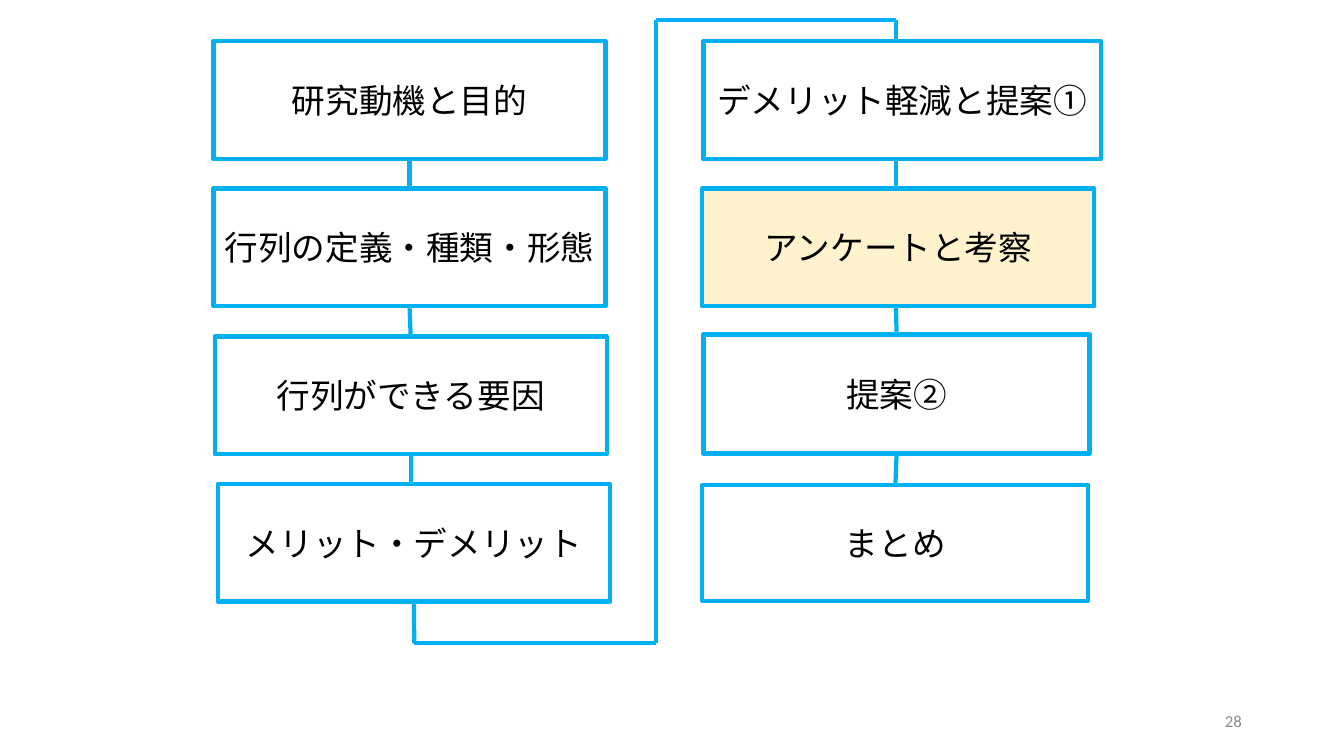
from pptx import Presentation
from pptx.dml.color import RGBColor
from pptx.enum.shapes import MSO_CONNECTOR, MSO_SHAPE
from pptx.enum.text import MSO_ANCHOR, PP_ALIGN
from pptx.oxml.ns import qn
from pptx.util import Cm, Pt
from lxml.etree import SubElement

SKY = RGBColor(0x00, 0xB0, 0xF0)
WHITE = RGBColor(0xFF, 0xFF, 0xFF)
CREAM = RGBColor(0xFF, 0xF2, 0xCC)
BLACK = RGBColor(0x00, 0x00, 0x00)
GREY = RGBColor(0x8C, 0x8C, 0x8C)

TOP, BOTTOM = 0, 2
LEFT_AXIS, GUTTER, RIGHT_AXIS = 10.44, 16.54, 22.58
ROOF, FLOOR = 0.51, 16.21

# text, left, top, width, height, fill
LEFT_STEPS = [
    ("研究動機と目的", 5.38, 1.04, 9.88, 2.97, WHITE),
    ("行列の定義・種類・形態", 5.38, 4.75, 9.88, 2.97, WHITE),
    ("行列ができる要因", 5.41, 8.48, 9.88, 2.97, WHITE),
    ("メリット・デメリット", 5.49, 12.19, 9.88, 2.97, WHITE),
]
RIGHT_STEPS = [
    ("デメリット軽減と提案①", 17.73, 1.04, 10.01, 2.97, WHITE),
    ("アンケートと考察", 17.7, 4.75, 9.88, 2.97, CREAM),
    ("提案②", 17.73, 8.43, 9.73, 3, WHITE),
    ("まとめ", 17.7, 12.22, 9.73, 2.92, WHITE),
]


def write(frame, text, size, color, alignment):
    frame.word_wrap = True
    frame.vertical_anchor = MSO_ANCHOR.MIDDLE
    paragraph = frame.paragraphs[0]
    paragraph.text = text
    paragraph.alignment = alignment
    paragraph.font.name = "Calibri"
    paragraph.font.size = Pt(size)
    paragraph.font.color.rgb = color


def add_step(slide, text, left, top, width, height, fill):
    step = slide.shapes.add_shape(
        MSO_SHAPE.RECTANGLE, Cm(left), Cm(top), Cm(width), Cm(height))
    step.shadow.inherit = False
    step.fill.solid()
    step.fill.fore_color.rgb = fill
    step.line.color.rgb = SKY
    step.line.width = Pt(3)
    write(step.text_frame, text, 24, BLACK, PP_ALIGN.CENTER)
    return step


def add_link(slide, start, end, weight=3):
    """Draw a line; each end is an (x, y) in cm or a step to join, from bottom to top."""
    start_x, start_y = start if isinstance(start, tuple) else (0, 0)
    end_x, end_y = end if isinstance(end, tuple) else (0, 0)
    link = slide.shapes.add_connector(
        MSO_CONNECTOR.STRAIGHT, Cm(start_x), Cm(start_y), Cm(end_x), Cm(end_y))
    if not isinstance(start, tuple):
        link.begin_connect(start, BOTTOM)
    if not isinstance(end, tuple):
        link.end_connect(end, TOP)
    link.line.color.rgb = SKY
    link.line.width = Pt(weight)
    SubElement(link._element.spPr, qn("a:effectLst"))


def add_page_number(slide, number):
    page = slide.shapes.add_textbox(Cm(23.93), Cm(17.65), Cm(7.62), Cm(1.02))
    write(page.text_frame, number, 12, GREY, PP_ALIGN.RIGHT)


def main():
    presentation = Presentation()
    presentation.slide_width = Cm(33.87)
    presentation.slide_height = Cm(19.05)
    slide = presentation.slides.add_slide(presentation.slide_layouts[6])

    motive, definition, causes, merits = [add_step(slide, *s) for s in LEFT_STEPS]
    _, _, proposal, summary = [add_step(slide, *s) for s in RIGHT_STEPS]

    add_link(slide, motive, definition)
    add_link(slide, definition, causes)
    add_link(slide, causes, (10.35, 12.19))
    add_link(slide, (RIGHT_AXIS, 4.01), (RIGHT_AXIS, 4.75))
    add_link(slide, (RIGHT_AXIS, 7.72), proposal)
    add_link(slide, proposal, summary)

    # Route from the foot of the left column to the head of the right one
    add_link(slide, merits, (LEFT_AXIS, FLOOR))
    add_link(slide, (LEFT_AXIS, FLOOR), (GUTTER, FLOOR), 2.75)
    add_link(slide, (GUTTER, ROOF), (GUTTER, FLOOR), 2.75)
    add_link(slide, (GUTTER, ROOF), (RIGHT_AXIS, ROOF), 2.75)
    add_link(slide, (RIGHT_AXIS, ROOF), (RIGHT_AXIS, 1.04))

    add_page_number(slide, "28")
    presentation.save("out.pptx")


if __name__ == "__main__":
    main()
